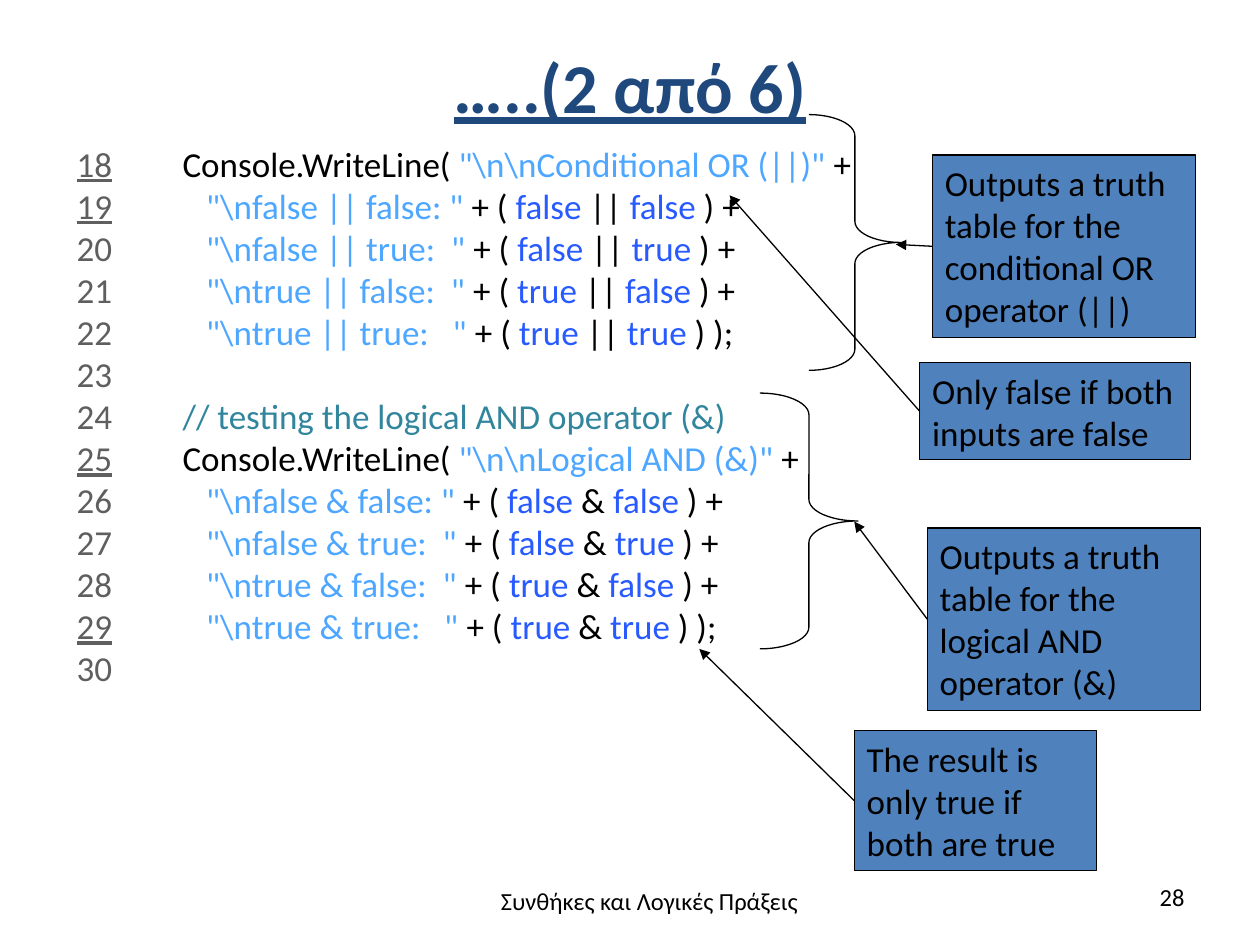
import itertools
import dataclasses
import pptx
import pptx.util
import pptx.dml.color
import pptx.enum.shapes
import pptx.enum.text
import pptx.oxml.ns
import lxml.etree

Inches = pptx.util.Inches
Kind = pptx.enum.shapes.MSO_SHAPE
Align = pptx.enum.text.PP_ALIGN
Fit = pptx.enum.text.MSO_AUTO_SIZE


@dataclasses.dataclass(frozen=True)
class Theme:
    """Hold the colours, font and sizes of the slide."""
    face: str = "Calibri"
    title: str = "1F497D"
    ink: str = "000000"
    num: str = "5F5F5F"
    quote: str = "4DA6FF"
    word: str = "275AFF"
    remark: str = "31859C"
    note: str = "4F81BD"
    head: int = 40
    code: int = 20
    foot: int = 14
    line: float = 0.75


LOOK = Theme()


def rgb(code):
    """Turn a hex code into a colour."""
    return pptx.dml.color.RGBColor.from_string(code)


def place(box):
    """Turn a box in inches into lengths."""
    return [Inches(side) for side in box]


def style(font, size, color):
    """Set the face, size and colour of a font."""
    font.name = LOOK.face
    font.size = pptx.util.Pt(size)
    font.color.rgb = rgb(color)


def stroke(line):
    """Give a line the ink colour and width."""
    line.color.rgb = rgb(LOOK.ink)
    line.width = pptx.util.Pt(LOOK.line)


def add_xml(root, tag, **attrs):
    """Add a drawing element below the root."""
    return lxml.etree.SubElement(root, pptx.oxml.ns.qn(tag), **attrs)


def add_title(slide, box, text):
    """Fill the title placeholder and move it to the box."""
    title = slide.shapes.title
    title.left, title.top, title.width, title.height = place(box)
    frame = title.text_frame
    frame.text = text
    frame.auto_size = Fit.NONE
    frame.vertical_anchor = pptx.enum.text.MSO_ANCHOR.MIDDLE
    para = frame.paragraphs[0]
    para.alignment = Align.CENTER
    font = para.runs[0].font
    style(font, LOOK.head, LOOK.title)
    font.bold = font.underline = True


def table_code(name, sign):
    """List the code lines that print the truth table of a sign."""
    rows = [[("Console.WriteLine( ", LOOK.ink),
             (f'"\\n\\n{name} ({sign})"', LOOK.quote), (" +", LOOK.ink)]]
    for pair in itertools.product(["false", "true"], repeat=2):
        left, right = pair
        trues = pair.count("true")
        gap = " " * (1 + trues)
        end = " ) );" if trues == 2 else " ) +"
        rows.append([
            (f'   "\\n{left} {sign} {right}:{gap}"', LOOK.quote),
            (" + ( ", LOOK.ink), (left, LOOK.word), (f" {sign} ", LOOK.ink),
            (right, LOOK.word), (end, LOOK.ink)])
    return rows


def add_code(slide, box, rows, first, marked):
    """Write numbered code lines in the box, underlining marked numbers."""
    frame = slide.shapes.add_textbox(*place(box)).text_frame
    frame.word_wrap = True
    frame.auto_size = Fit.SHAPE_TO_FIT_TEXT
    for num, row in enumerate(rows, first):
        para = frame.paragraphs[0] if num == first else frame.add_paragraph()
        tabs = add_xml(para._p.get_or_add_pPr(), "a:tabLst")
        add_xml(tabs, "a:tab", pos=str(Inches(0.84)), algn="l")
        tab = [("\t", LOOK.num)] if row else []
        for text, color in [(str(num), LOOK.num)] + tab + row:
            run = para.add_run()
            run.text = text
            style(run.font, LOOK.code, color)
        para.runs[0].font.underline = num in marked


def add_brace(slide, box, bend):
    """Draw a right brace in the box."""
    brace = slide.shapes.add_shape(Kind.RIGHT_BRACE, *place(box))
    brace.adjustments[0] = bend
    brace.shadow.inherit = False
    brace.fill.background()
    stroke(brace.line)


def add_note(slide, box, text, tip):
    """Draw a note in the box and an arrow from its left side to the tip."""
    note = slide.shapes.add_shape(Kind.RECTANGLE, *place(box))
    note.shadow.inherit = False
    note.fill.solid()
    note.fill.fore_color.rgb = rgb(LOOK.note)
    stroke(note.line)
    frame = note.text_frame
    frame.text = text
    frame.word_wrap = True
    frame.auto_size = Fit.SHAPE_TO_FIT_TEXT
    frame.vertical_anchor = pptx.enum.text.MSO_ANCHOR.TOP
    para = frame.paragraphs[0]
    para.alignment = Align.LEFT
    style(para.runs[0].font, LOOK.code, LOOK.ink)
    left, top, _, high = box
    arrow = slide.shapes.add_connector(
        pptx.enum.shapes.MSO_CONNECTOR.STRAIGHT,
        *place((left, top + high / 2, *tip)))
    stroke(arrow.line)
    add_xml(arrow.line._get_or_add_ln(), "a:tailEnd", type="triangle")
    add_xml(arrow._element.spPr, "a:effectLst")


def add_foot(slide, box, text, align):
    """Write a small footer text in the box."""
    frame = slide.shapes.add_textbox(*place(box)).text_frame
    frame.text = text
    frame.word_wrap = True
    para = frame.paragraphs[0]
    para.alignment = align
    style(para.runs[0].font, LOOK.foot, LOOK.ink)


def main():
    """Build the slide and save it."""
    deck = pptx.Presentation()
    deck.slide_width, deck.slide_height = Inches(10), Inches(7.5)
    slide = deck.slides.add_slide(deck.slide_layouts[5])
    add_title(slide, (0.5, -0.03, 9, 1.42), "…..(2 από 6)")
    remark = [("// testing the logical AND operator (&)", LOOK.remark)]
    rows = [*table_code("Conditional OR", "||"), [], remark,
            *table_code("Logical AND", "&"), []]
    add_code(slide, (0.51, 1.08, 8.99, 4.48), rows, 18, {18, 19, 25, 29})
    add_brace(slide, (6.42, 0.91, 0.73, 2.03), 0.23)
    add_brace(slide, (6.03, 3.12, 0.78, 2.03), 0.22)
    notes = [
        ((7.4, 1.23, 2.09, 1.45), (7.11, 1.94),
         "Outputs a truth table for the conditional OR operator (||)"),
        ((7.3, 2.88, 2.15, 0.77), (5.79, 1.55),
         "Only false if both inputs are false"),
        ((7.36, 4.19, 2.17, 1.45), (6.78, 4.14),
         "Outputs a truth table for the logical AND operator (&)"),
        ((6.78, 5.8, 1.92, 1.11), (5.55, 5.15),
         "The result is only true if both are true")]
    for box, tip, text in notes:
        add_note(slide, box, text, tip)
    add_foot(slide, (3.41, 6.98, 3.49, 0.55),
             "Συνθήκες και Λογικές Πράξεις", Align.CENTER)
    add_foot(slide, (7.17, 6.95, 2.33, 0.4), "28", Align.RIGHT)
    deck.save("out.pptx")


if __name__ == "__main__":
    main()
